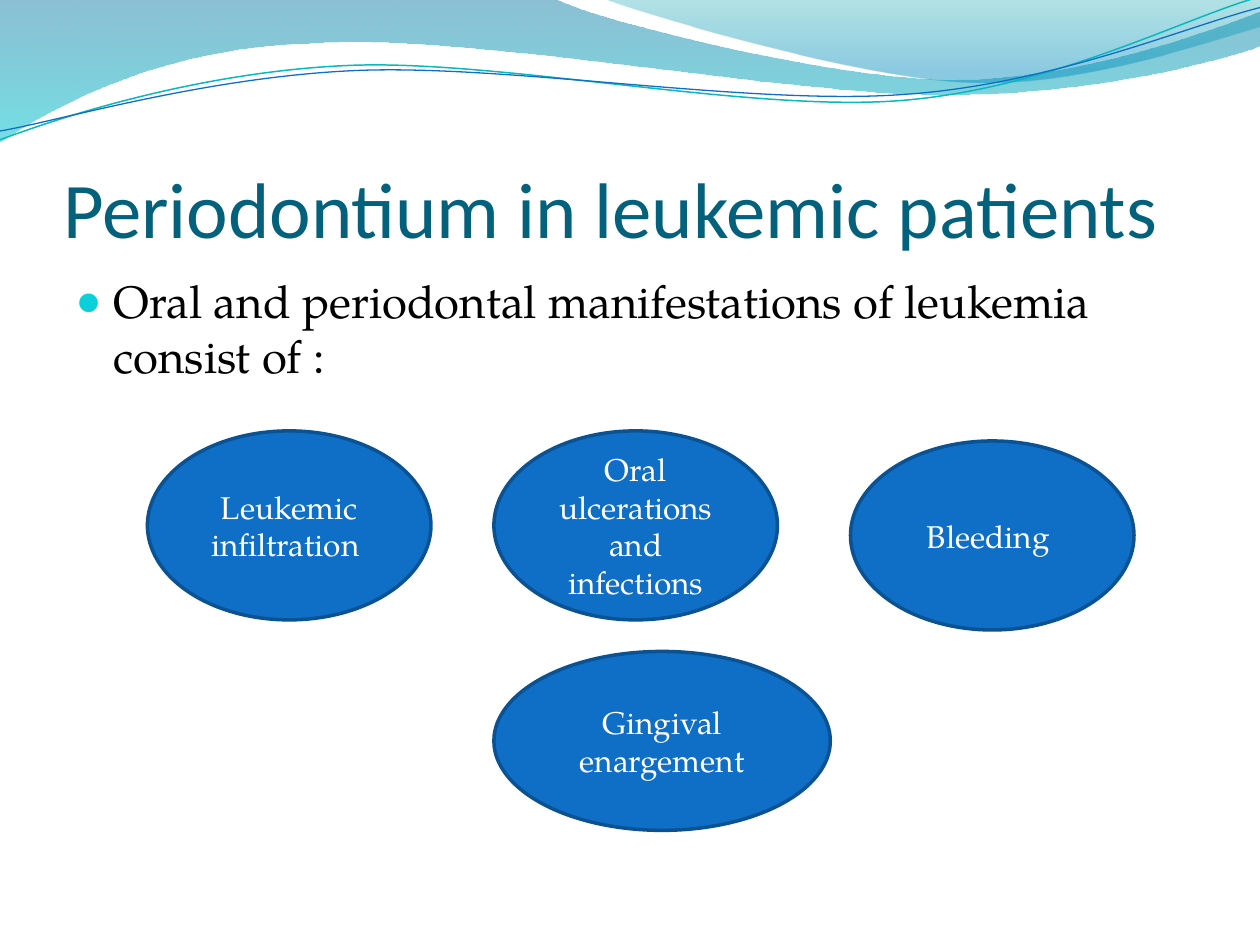
"""Build the slide on oral signs of leukemia, with waves along its top."""
from lxml.etree import SubElement
from pptx import Presentation
from pptx.dml.color import RGBColor
from pptx.enum.shapes import MSO_SHAPE
from pptx.enum.text import MSO_ANCHOR, MSO_AUTO_SIZE, PP_ALIGN
from pptx.oxml.ns import qn
from pptx.util import Inches, Pt

OVAL = MSO_SHAPE.OVAL
LEFT, CENTER = PP_ALIGN.LEFT, PP_ALIGN.CENTER
BOTTOM, MIDDLE = MSO_ANCHOR.BOTTOM, MSO_ANCHOR.MIDDLE
NONE = MSO_AUTO_SIZE.NONE
SERIF = "TeX Gyre Pagella"
rgb = RGBColor.from_string


def style(para, face, size, color, align):
    """Set the font and alignment of a paragraph."""
    para.alignment = align
    para.font.name, para.font.size = face, Pt(size)
    para.font.color.rgb = rgb(color)


def draw(steps, close):
    """Draw an outline of points (2 numbers) and Bezier curves (6 numbers)."""
    spots = [(Inches(step[i]), Inches(step[i + 1]))
             for step in steps for i in range(0, len(step), 2)]
    form = slide.shapes.build_freeform(*spots[0])
    form.add_line_segments(spots[1:], close=close)
    wave = form.convert_to_shape()
    wave.shadow.inherit = False
    lines = iter(list(wave._element.iter(qn("a:lnTo"))))
    for step in steps[1:]:
        first = next(lines)
        if len(step) == 6:
            first.tag = qn("a:cubicBezTo")
            for line in (next(lines), next(lines)):
                first.append(line[0])
                line.getparent().remove(line)
    return wave


prs = Presentation()
prs.slide_width, prs.slide_height = Inches(10), Inches(7.5)
slide = prs.slides.add_slide(prs.slide_layouts[1])

bands = [
    ([(0, 0), (4.4, -0.01), (4.76, 0.17, 6.64, 0.63, 7.58, 0.63),
      (8.53, 0.63, 9.58, 0.26, 10, 0.09), (10.01, 0.36),
      (9.83, 0.44, 8.7, 0.76, 7.46, 0.75), (6.22, 0.75, 3.82, 0.28, 2.57, 0.34),
      (1.29, 0.36, 0.46, 0.83, -0.01, 1.13), (0, 0)],
     [(0, "0074A1", 45), (1, "00C6CF", 55)]),
    ([(4.79, -0.01), (5.09, 0.11, 6.82, 0.62, 7.69, 0.65),
      (8.56, 0.69, 9.61, 0.32, 10, 0.21), (10, 0), (4.79, -0.01)],
     [(0, "00A1A9", 30), (0.8, "008BBF", 45)]),
]
for steps, stops in bands:
    band = draw(steps, True)
    band.line.fill.background()
    band.fill.gradient()
    band.fill.gradient_angle = 270
    for stop, (place, color, _) in zip(band.fill.gradient_stops, stops):
        stop.position = place
        stop.color.rgb = rgb(color)
    tints = list(band._element.spPr.iter(qn("a:srgbClr")))
    for tint, (_, _, alpha) in zip(tints, stops):
        SubElement(tint, qn("a:alpha"), val=str(alpha * 1000))

curves = [
    ([(0, 1.11), (0.48, 0.93, 1.58, 0.57, 2.77, 0.52),
      (3.95, 0.47, 5.93, 0.89, 7.13, 0.8), (8.33, 0.71, 9.38, 0.15, 9.98, -0.02)],
     "0AB8BF", 0.85),
    ([(0, 1.04), (0.47, 0.96, 1.64, 0.61, 2.83, 0.56),
      (4.03, 0.51, 5.97, 0.84, 7.17, 0.75), (8.36, 0.67, 9.41, 0.21, 10, 0.06)],
     "0F6FC6", 0.75),
]
for steps, color, width in curves:
    curve = draw(steps, False)
    curve.fill.background()
    curve.line.color.rgb = rgb(color)
    curve.line.width = Pt(width)

title = slide.shapes.title
title.left, title.top, title.width, title.height = map(Inches, (0.5, 0.77, 9, 1.25))
frame = title.text_frame
frame.text = "Periodontium in leukemic patients"
frame.auto_size, frame.vertical_anchor = NONE, BOTTOM
frame.margin_left = frame.margin_right = frame.margin_bottom = 0
style(frame.paragraphs[0], "Calibri", 45, "04617B", LEFT)

body = slide.placeholders[1]
body.left, body.top, body.width, body.height = map(Inches, (0.5, 2.12, 9, 4.8))
frame = body.text_frame
frame.text = "Oral and periodontal manifestations of leukemia consist of :"
frame.auto_size = NONE
para = frame.paragraphs[0]
props = para._p.get_or_add_pPr()
props.set("marL", str(Inches(0.3)))
props.set("indent", str(Inches(-0.3)))
SubElement(SubElement(props, qn("a:buClr")), qn("a:srgbClr"), val="0BD0D9")
SubElement(props, qn("a:buSzPct"), val="95000")
SubElement(props, qn("a:buChar"), char="●")
style(para, SERIF, 26, "000000", LEFT)

signs = [
    ("Leukemic infiltration ", 1.17, 3.42, 2.25, 1.5),
    ("Oral ulcerations and infections", 3.92, 3.42, 2.25, 1.5),
    ("Bleeding ", 6.75, 3.5, 2.25, 1.5),
    ("Gingival enargement", 3.92, 5.17, 2.67, 1.42),
]
for text, *box in signs:
    oval = slide.shapes.add_shape(OVAL, *map(Inches, box))
    oval.shadow.inherit = False
    oval.fill.solid()
    oval.fill.fore_color.rgb = rgb("0F6FC6")
    oval.line.color.rgb = rgb("0B5292")
    oval.line.width = Pt(2)
    oval.text_frame.text = text
    oval.text_frame.vertical_anchor = MIDDLE
    style(oval.text_frame.paragraphs[0], SERIF, 18, "FFFFFF", CENTER)

prs.save("out.pptx")
